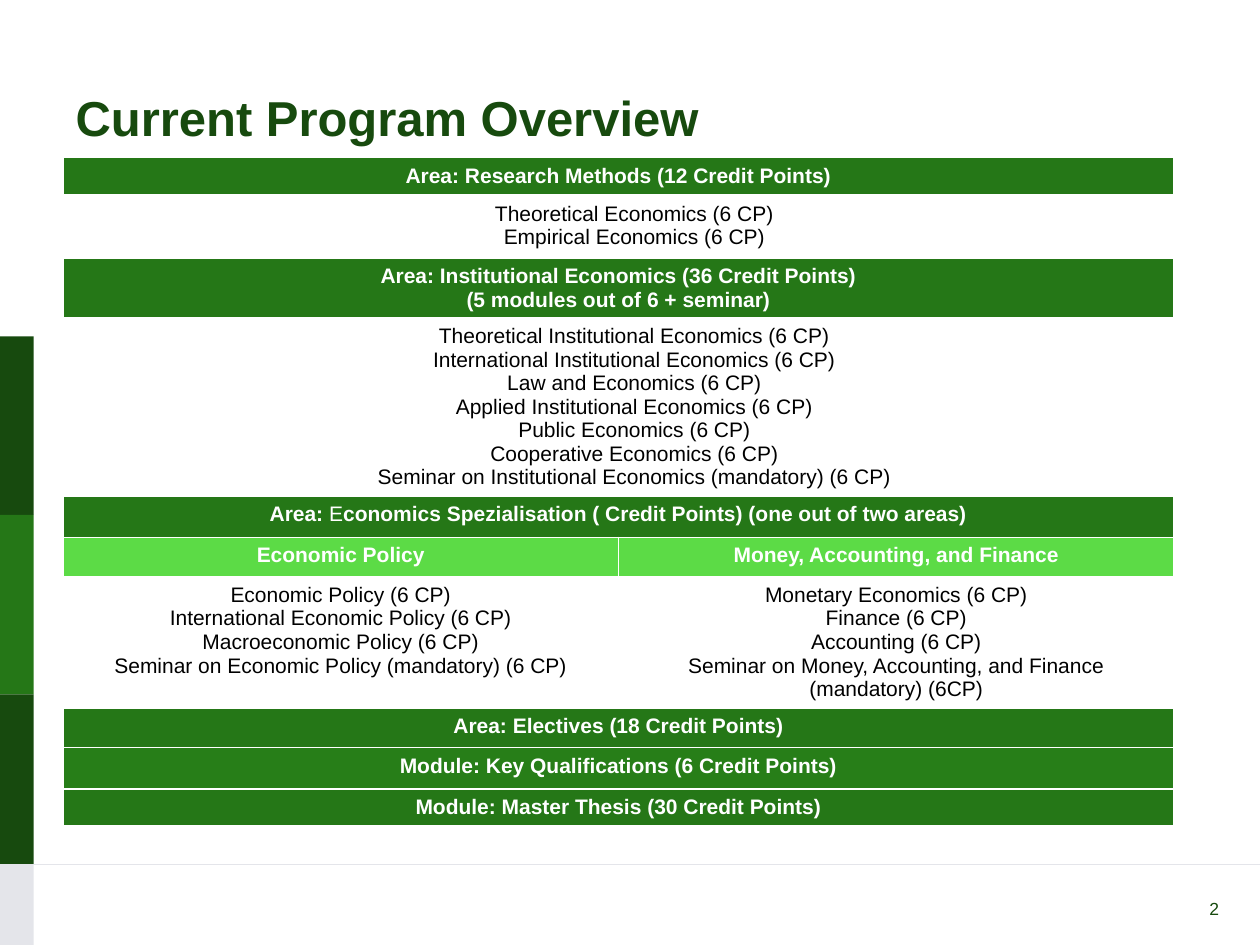
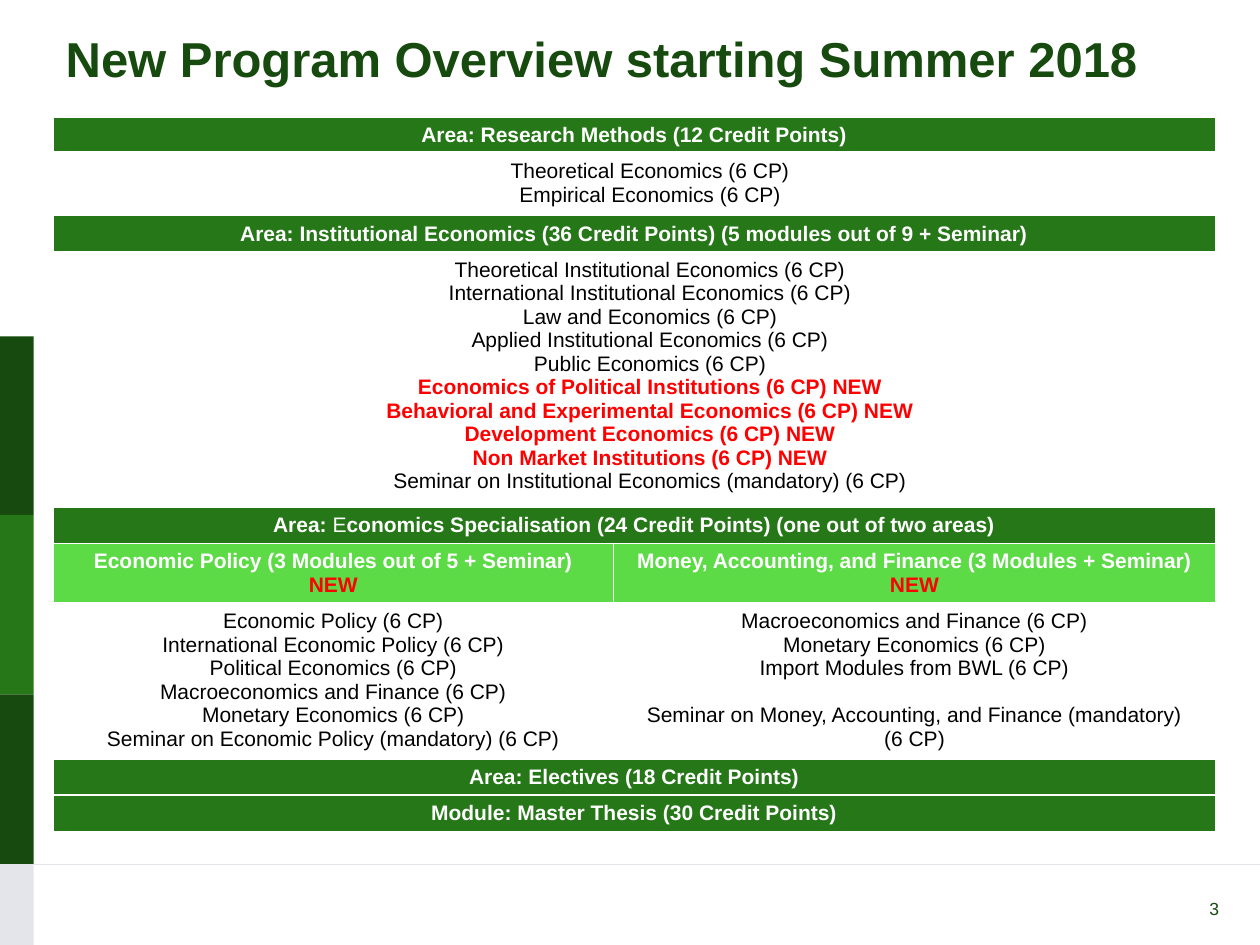
from lxml import etree
from pptx import Presentation
from pptx.dml.color import RGBColor
from pptx.enum.shapes import MSO_CONNECTOR, MSO_SHAPE
from pptx.enum.text import MSO_ANCHOR, MSO_AUTO_SIZE, PP_ALIGN
from pptx.oxml.ns import qn
from pptx.util import Cm, Pt

LEFT, CENTER = PP_ALIGN.LEFT, PP_ALIGN.CENTER
TOP, MIDDLE = MSO_ANCHOR.TOP, MSO_ANCHOR.MIDDLE
RECTANGLE, STRAIGHT = MSO_SHAPE.RECTANGLE, MSO_CONNECTOR.STRAIGHT
NO_AUTOFIT = MSO_AUTO_SIZE.NONE

FONT = "Arial"
DARK, GREEN, KEY_GREEN, LIGHT = "174A0E", "257717", "277E18", "5CDB46"
GREY, WHITE, BLACK, RED = "E4E5EA", "FFFFFF", "000000", "FF0000"
SLIDE_WIDTH, SLIDE_HEIGHT = 25.4, 19.05
BAND_WIDTH, FOOTER_TOP = 0.68, 17.43
BAND_EDGES = [6.78, 10.38, 14.0, FOOTER_TOP, SLIDE_HEIGHT]
BAND_COLORS = [DARK, GREEN, DARK, GREY]
LIST_INDENT = 0.64

PLAIN = {"bold": False}
NEW = {"color": RED}
NEW_MODULE = {"color": RED, "bold": True}

RESEARCH_HEADING = "Area: Research Methods (12 Credit Points)"
RESEARCH = ["Theoretical Economics (6 CP)", "Empirical Economics (6 CP)"]
INSTITUTIONAL = [
    "Theoretical Institutional Economics (6 CP)",
    "International Institutional Economics (6 CP)",
    "Law and Economics (6 CP)",
    "Applied Institutional Economics (6 CP)",
    "Public Economics (6 CP)",
]
INSTITUTIONAL_SEMINAR = "Seminar on Institutional Economics (mandatory) (6 CP)"
NEW_INSTITUTIONAL = [
    "Economics of Political Institutions (6 CP) NEW",
    "Behavioral and Experimental Economics (6 CP) NEW",
    "Development Economics (6 CP) NEW",
    "Non Market Institutions (6 CP) NEW",
]
POLICY = ["Economic Policy (6 CP)", "International Economic Policy (6 CP)"]
POLICY_SEMINAR = "Seminar on Economic Policy (mandatory) (6 CP)"
MACRO_FINANCE = "Macroeconomics and Finance (6 CP)"
MONETARY = "Monetary Economics (6 CP)"
ELECTIVES_HEADING = "Area: Electives (18 Credit Points)"
THESIS_HEADING = "Module: Master Thesis (30 Credit Points)"


def rgb(value):
    return RGBColor.from_string(value)


def write(frame, paragraphs, size=12, color=BLACK, bold=False, align=LEFT,
          anchor=TOP, indent=0):
    """Fill a frame; a paragraph is a string or a list of (text, overrides)."""
    frame.word_wrap = True
    frame.vertical_anchor = anchor
    for index, runs in enumerate(paragraphs):
        paragraph = frame.paragraphs[0] if index == 0 else frame.add_paragraph()
        paragraph.alignment = align
        if indent:
            properties = paragraph._p.get_or_add_pPr()
            properties.set("marL", str(Cm(indent)))
            properties.set("indent", "0")
        for text, overrides in [(runs, {})] if isinstance(runs, str) else runs:
            style = {"color": color, "bold": bold, **overrides}
            for number, line in enumerate(text.split("\n")):
                if number:
                    paragraph.add_line_break()
                if not line:
                    continue
                run = paragraph.add_run()
                run.text = line
                run.font.name = FONT
                run.font.size = Pt(size)
                run.font.bold = style["bold"]
                run.font.color.rgb = rgb(style["color"])


def move_to_layout(shape, layout):
    layout.element.cSld.spTree.append(shape.element)


def decorate_layout(layout, slide):
    """Build the side band and footer rule once, on the shared layout."""
    for top, bottom, color in zip(BAND_EDGES, BAND_EDGES[1:], BAND_COLORS):
        band = slide.shapes.add_shape(
            RECTANGLE, 0, Cm(top), Cm(BAND_WIDTH), Cm(bottom - top))
        band.shadow.inherit = False
        band.fill.solid()
        band.fill.fore_color.rgb = rgb(color)
        band.line.fill.background()
        move_to_layout(band, layout)
    rule = slide.shapes.add_connector(
        STRAIGHT, 0, Cm(FOOTER_TOP), Cm(SLIDE_WIDTH), Cm(FOOTER_TOP))
    rule.line.color.rgb = rgb(GREY)
    rule.line.width = Pt(0.5)
    etree.SubElement(rule.element.spPr, qn("a:effectLst"))
    move_to_layout(rule, layout)


def add_title(slide, text, box):
    title = slide.shapes.title
    title.left, title.top, title.width, title.height = map(Cm, box)
    write(title.text_frame, [text], size=28, color=DARK, bold=True, anchor=MIDDLE)
    title.text_frame.auto_size = NO_AUTOFIT


def add_page_number(slide, number):
    page = slide.shapes.add_textbox(Cm(24.13), Cm(17.98), Cm(1.27), Cm(1.07))
    write(page.text_frame, [str(number)], size=10, color=DARK)


def add_borders(cell, bottom=1):
    properties = cell._tc.get_or_add_tcPr()
    for index, (side, width) in enumerate(
            [("lnL", 1), ("lnR", 1), ("lnT", 1), ("lnB", bottom)]):
        line = etree.Element(qn(f"a:{side}"), w=str(Pt(width)))
        fill = etree.SubElement(line, qn("a:solidFill"))
        etree.SubElement(fill, qn("a:srgbClr"), val=WHITE)
        properties.insert(index, line)


def heading(height, *runs, fill=GREEN):
    """Describe a full-width heading row."""
    return height, fill, [[list(runs) if len(runs) > 1 else runs[0]]]


def specialisation(height, rest):
    return heading(height, ("Area: ", {}), ("E", PLAIN), (rest, {}))


def modules(height, *columns):
    return height, WHITE, columns


def add_program(slide, left, top, column_widths, rows):
    """Place the program table; each row is (height, fill, columns)."""
    table = slide.shapes.add_table(
        len(rows), 2, Cm(left), Cm(top), Cm(sum(column_widths)),
        Cm(sum(row[0] for row in rows))).table
    table.first_row = table.horz_banding = False
    for column, width in zip(table.columns, column_widths):
        column.width = Cm(width)
    for index, (height, fill, columns) in enumerate(rows):
        table.rows[index].height = Cm(height)
        full_width = len(columns) == 1
        is_list = fill == WHITE
        for cell in table.rows[index].cells:
            cell.fill.solid()
            cell.fill.fore_color.rgb = rgb(fill)
            add_borders(cell, bottom=3 if index == 0 else 1)
        if full_width:
            table.cell(index, 0).merge(table.cell(index, 1))
        for number, paragraphs in enumerate(columns):
            write(table.cell(index, number).text_frame, paragraphs,
                  color=BLACK if is_list else WHITE, bold=not is_list,
                  align=CENTER,
                  indent=LIST_INDENT if is_list and full_width else 0)
    return table


def fill_current_program(slide):
    add_title(slide, "Current Program Overview", (1.27, 0.76, 22.86, 3.18))
    add_program(slide, 1.27, 3.18, [11.2, 11.2], [
        heading(0.77, RESEARCH_HEADING),
        modules(1.26, RESEARCH),
        heading(1.18, "Area: Institutional Economics (36 Credit Points)\n"
                      "(5 modules out of 6 + seminar)"),
        modules(3.59, INSTITUTIONAL + ["Cooperative Economics (6 CP)",
                                       INSTITUTIONAL_SEMINAR]),
        specialisation(0.83, "conomics Spezialisation ( Credit Points) "
                             "(one out of two areas)"),
        (0.8, LIGHT, [["Economic Policy"], ["Money, Accounting, and Finance"]]),
        modules(2.64,
                POLICY + ["Macroeconomic Policy (6 CP)", POLICY_SEMINAR],
                [MONETARY, "Finance (6 CP)", "Accounting (6 CP)",
                 "Seminar on Money, Accounting, and Finance (mandatory) (6CP)"]),
        heading(0.8, ELECTIVES_HEADING),
        heading(0.83, "Module: Key Qualifications (6 Credit Points)",
                fill=KEY_GREEN),
        heading(0.75, THESIS_HEADING),
    ])
    add_page_number(slide, 2)


def fill_new_program(slide):
    add_title(slide, "New Program Overview starting Summer 2018",
              (1.07, 0, 22.86, 2.34))
    new_institutional = [[(name, NEW_MODULE)] for name in NEW_INSTITUTIONAL]
    program = add_program(slide, 1.07, 2.36, [11.3, 12.13], [
        heading(0.72, RESEARCH_HEADING),
        modules(1.26, RESEARCH),
        heading(0.72, "Area: Institutional Economics (36 Credit Points) "
                      "(5 modules out of 9 + Seminar)"),
        modules(5.15, INSTITUTIONAL + new_institutional
                + [INSTITUTIONAL_SEMINAR]),
        specialisation(0.72, "conomics Specialisation (24 Credit Points) "
                             "(one out of two areas)"),
        (1.2, LIGHT, [
            [[("Economic Policy (3 Modules out of 5 + Seminar)\n", {}),
              ("NEW", NEW)]],
            [[("Money, Accounting, and Finance (3 Modules + Seminar) ", {}),
              ("NEW", NEW)]],
        ]),
        modules(3.14,
                POLICY + ["Political Economics (6 CP)", MACRO_FINANCE, MONETARY,
                          POLICY_SEMINAR],
                [MACRO_FINANCE, MONETARY, "Import Modules from BWL (6 CP)",
                 "Seminar on Money, Accounting, and Finance (mandatory)\n"
                 "(6 CP)"]),
        heading(0.72, ELECTIVES_HEADING),
        heading(0.72, THESIS_HEADING),
    ])
    finance_seminar = program.cell(6, 1).text_frame.paragraphs[-1]
    finance_seminar.space_before = Pt(13.5)
    add_page_number(slide, 3)


def main():
    deck = Presentation()
    deck.slide_width, deck.slide_height = Cm(SLIDE_WIDTH), Cm(SLIDE_HEIGHT)
    title_only = deck.slide_layouts[5]
    current = deck.slides.add_slide(title_only)
    decorate_layout(title_only, current)
    fill_current_program(current)
    fill_new_program(deck.slides.add_slide(title_only))
    deck.save("out.pptx")


if __name__ == "__main__":
    main()
